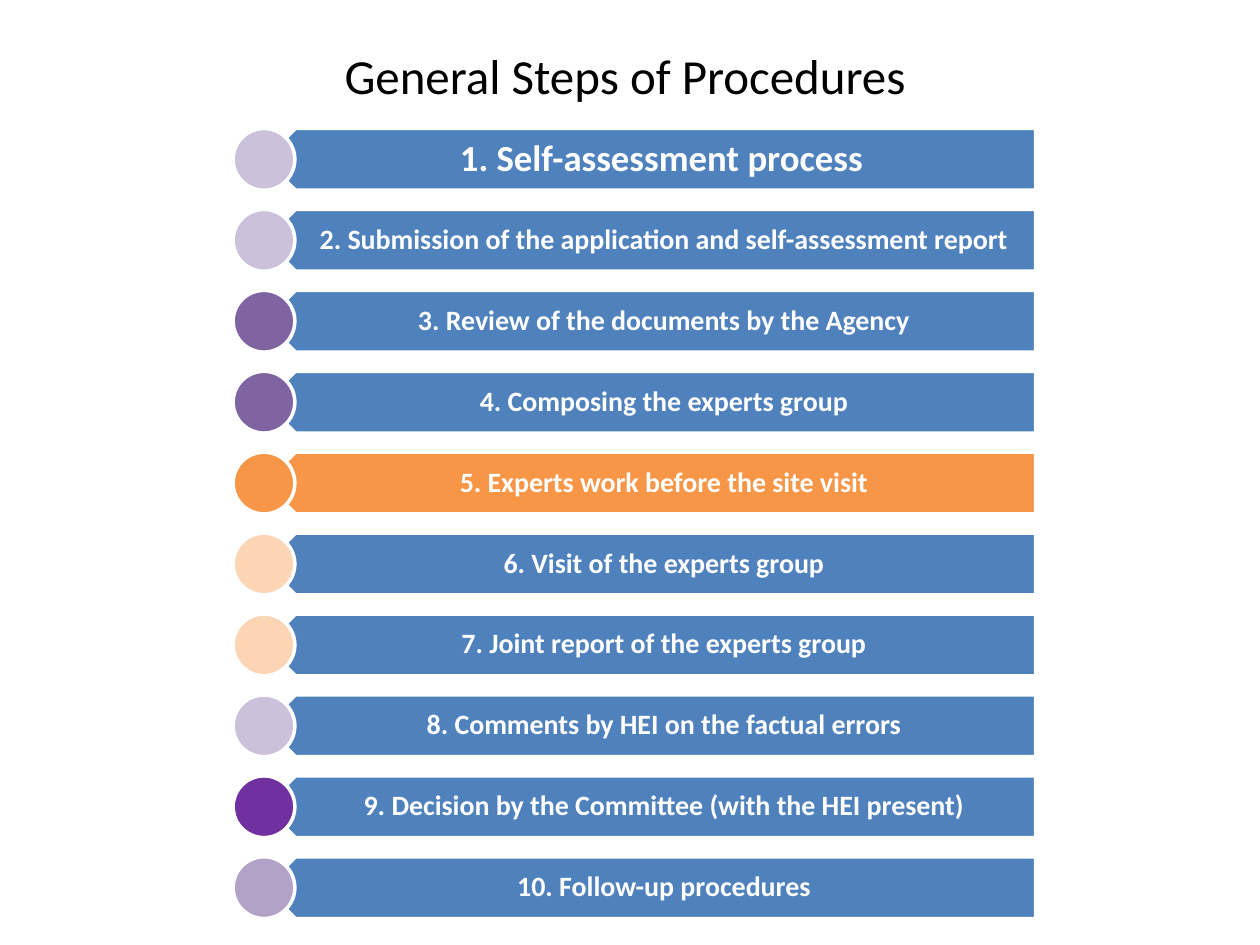
from pptx import Presentation
from pptx import util as u
from pptx.dml.color import RGBColor
from pptx.enum import shapes, text

COLORS = {
    "black": "000000", "white": "FFFFFF", "blue": "4F81BD", "orange": "F79646",
    "peach": "FCD5B5", "lilac": "CCC1DA", "mauve": "B3A2C7",
    "purple": "8064A2", "violet": "7030A0",
}
TITLE = "General Steps of Procedures"
STEPS = [
    ("1. Self-assessment process", "lilac", "blue", 21),
    ("2. Submission of the application and self-assessment report", "lilac", "blue", 16),
    ("3. Review of the documents by the Agency", "purple", "blue", 16),
    ("4. Composing the experts group", "purple", "blue", 16),
    ("5. Experts work before the site visit", "orange", "orange", 16),
    ("6. Visit of the experts group", "peach", "blue", 16),
    ("7. Joint report of the experts group", "peach", "blue", 16),
    ("8. Comments by HEI on the factual errors", "lilac", "blue", 16),
    ("9. Decision by the Committee (with the HEI present)", "violet", "blue", 16),
    ("10. Follow-up procedures", "mauve", "blue", 16),
]
FIRST_TOP, LAST_TOP, HEIGHT = 1.02, 6.8, 0.49
BAR_LEFT, BAR_WIDTH = 2.1, 6.12
LABEL_LEFT, LABEL_WIDTH = 2.22, 6
CIRCLE_LEFT = 1.85


def color(name):
    return RGBColor.from_string(COLORS[name])


def add_piece(slide, kind, area, fill):
    piece = slide.shapes.add_shape(kind, *map(u.Inches, area))
    piece.shadow.inherit = False
    piece.fill.solid()
    piece.fill.fore_color.rgb = color(fill)
    piece.line.color.rgb = color("white")
    piece.line.width = u.Pt(2)
    return piece


def add_label(slide, area, words, size, ink, bold=False, insets=(0.1, 0.05, 0.1, 0.05)):
    frame = slide.shapes.add_textbox(*map(u.Inches, area)).text_frame
    frame.word_wrap = True
    frame.vertical_anchor = text.MSO_ANCHOR.MIDDLE
    (frame.margin_left, frame.margin_top,
     frame.margin_right, frame.margin_bottom) = map(u.Inches, insets)
    para = frame.paragraphs[0]
    para.alignment = text.PP_ALIGN.CENTER
    span = para.add_run()
    span.text = words
    span.font.name = "Calibri"
    span.font.size = u.Pt(size)
    span.font.bold = bold
    span.font.color.rgb = color(ink)
    return para


def main():
    deck = Presentation()
    deck.slide_width, deck.slide_height = u.Inches(10), u.Inches(7.5)
    page = deck.slides.add_slide(deck.slide_layouts[6])
    add_label(page, (0.65, 0, 8.62, 1.19), TITLE, 28, "black")

    pitch = (LAST_TOP - FIRST_TOP) / (len(STEPS) - 1)
    for index, (words, circle_fill, bar_fill, size) in enumerate(STEPS):
        top = FIRST_TOP + index * pitch
        bar = add_piece(page, shapes.MSO_SHAPE.PENTAGON,
                        (BAR_LEFT, top, BAR_WIDTH, HEIGHT), bar_fill)
        bar.rotation = 180
        insets = (0.22, 0.09, 0.16, 0.09) if size > 16 else (0.22, 0.07, 0.12, 0.07)
        para = add_label(page, (LABEL_LEFT, top, LABEL_WIDTH, HEIGHT),
                         words, size, "white", True, insets)
        para.line_spacing = 0.9
        add_piece(page, shapes.MSO_SHAPE.OVAL,
                  (CIRCLE_LEFT, top, HEIGHT, HEIGHT), circle_fill)

    deck.save("out.pptx")


if __name__ == "__main__":
    main()
